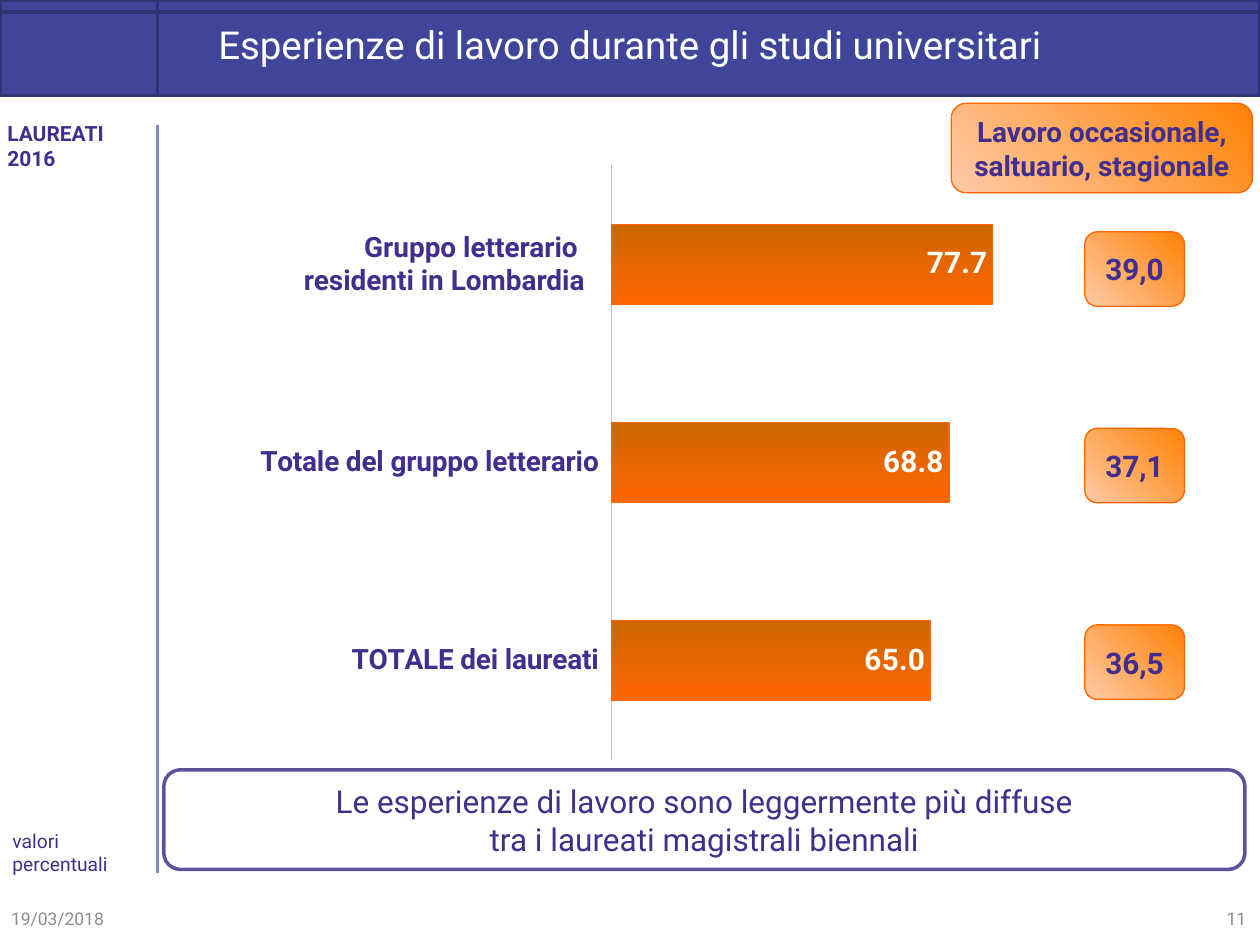
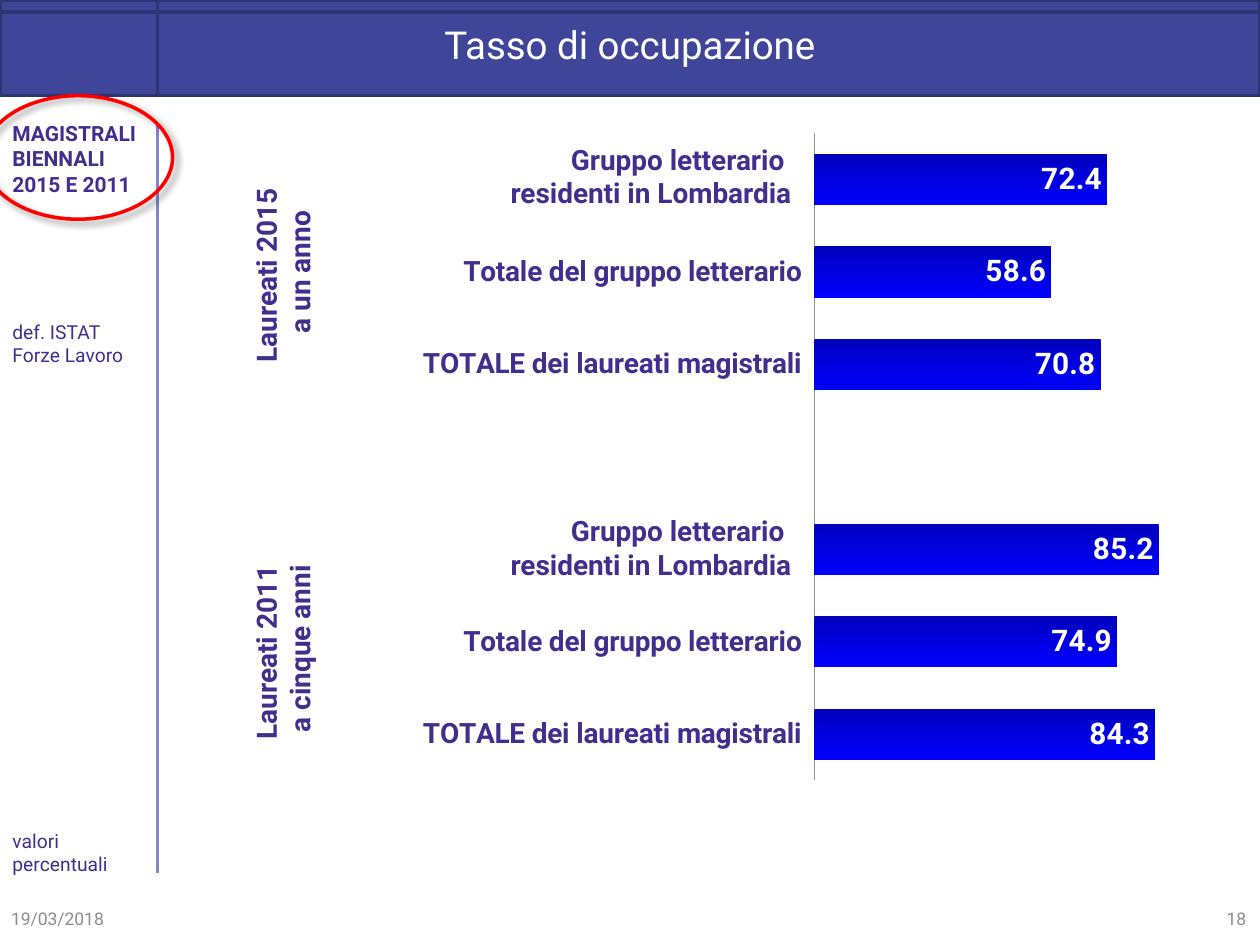
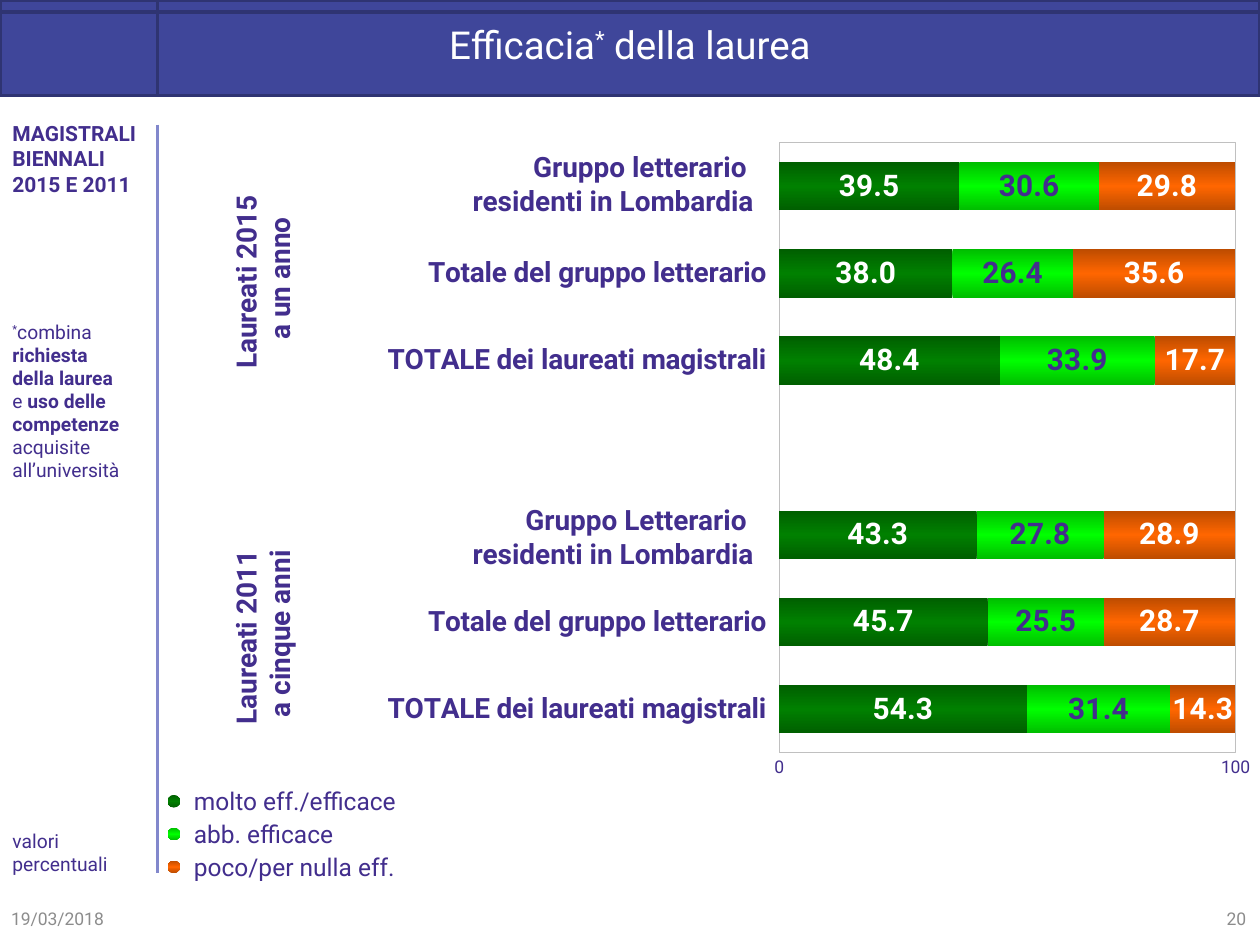
from dataclasses import dataclass

from lxml import etree
from pptx import Presentation
from pptx.chart.data import CategoryChartData
from pptx.dml.color import RGBColor
from pptx.enum.chart import XL_CHART_TYPE, XL_LABEL_POSITION, XL_TICK_LABEL_POSITION, XL_TICK_MARK
from pptx.enum.shapes import MSO_CONNECTOR, MSO_SHAPE
from pptx.enum.text import MSO_ANCHOR, PP_ALIGN
from pptx.oxml.ns import qn
from pptx.util import Inches, Pt

FONT = "Roboto"
WHITE = RGBColor(0xFF, 0xFF, 0xFF)
INDIGO = RGBColor(0x42, 0x2E, 0x8D)
BAND = RGBColor(0x3F, 0x46, 0x9A)
BAND_EDGE = RGBColor(0x2F, 0x34, 0x72)
RULE = RGBColor(0x82, 0x88, 0xCC)
CALLOUT_EDGE = RGBColor(0x5F, 0x50, 0x99)
FOOTER_GRAY = RGBColor(0x8C, 0x8C, 0x8C)
AXIS_GRAY = RGBColor(0xC0, 0xC0, 0xC0)
DARK_AXIS_GRAY = RGBColor(0x96, 0x96, 0x96)
RED = RGBColor(0xFF, 0x00, 0x00)
BLACK = RGBColor(0x00, 0x00, 0x00)
ORANGE = RGBColor(0xFF, 0x66, 0x00)
BROWN = RGBColor(0xCC, 0x66, 0x00)
AMBER = RGBColor(0xFF, 0x82, 0x05)
PEACH = RGBColor(0xFF, 0xCB, 0xA7)
NAVY = RGBColor(0x00, 0x00, 0xBD)
BLUE = RGBColor(0x00, 0x00, 0xFF)
DARK_GREEN = RGBColor(0x00, 0x5F, 0x00)
GREEN = RGBColor(0x00, 0x80, 0x00)
MID_LIME = RGBColor(0x00, 0xBD, 0x00)
LIME = RGBColor(0x00, 0xFF, 0x00)
RUST = RGBColor(0xBD, 0x4C, 0x00)

LEFT, CENTER, RIGHT = PP_ALIGN.LEFT, PP_ALIGN.CENTER, PP_ALIGN.RIGHT
TOP, MIDDLE, BOTTOM = MSO_ANCHOR.TOP, MSO_ANCHOR.MIDDLE, MSO_ANCHOR.BOTTOM
STRAIGHT = MSO_CONNECTOR.STRAIGHT
ROUNDED = MSO_SHAPE.ROUNDED_RECTANGLE
OVAL = MSO_SHAPE.OVAL
INTERNAL_STORAGE = MSO_SHAPE.FLOWCHART_INTERNAL_STORAGE
DOT = MSO_SHAPE.FLOWCHART_CONNECTOR
CLUSTERED, STACKED = XL_CHART_TYPE.BAR_CLUSTERED, XL_CHART_TYPE.BAR_STACKED
INSIDE_END, CENTERED = XL_LABEL_POSITION.INSIDE_END, XL_LABEL_POSITION.CENTER
NO_TICK = XL_TICK_MARK.NONE
LOW = XL_TICK_LABEL_POSITION.LOW

GREENS = (DARK_GREEN, GREEN, DARK_GREEN)
LIMES = (MID_LIME, LIME, MID_LIME)
ORANGES = (RUST, ORANGE, RUST)
GROUP = "Gruppo letterario \nresidenti in Lombardia"
COHORT_CATEGORIES = ["TOTALE dei laureati magistrali", "Totale del gruppo letterario", ""]
TWO_COHORTS = COHORT_CATEGORIES + [""] + COHORT_CATEGORIES
ONE_YEAR = "Laureati 2015 \na un anno"
FIVE_YEARS = "Laureati 2011 \na cinque anni"
MASTERS = "MAGISTRALI BIENNALI 2015 E 2011"


@dataclass
class Box:
    """Region of a slide, in inches."""
    left: float
    top: float
    width: float
    height: float

    def lengths(self):
        """Return the four lengths that shapes are placed with."""
        return [Inches(side) for side in (self.left, self.top, self.width, self.height)]


@dataclass
class Bars:
    """Values, gradient colours and label colour of one series."""
    values: list
    colors: tuple
    label_color: RGBColor = WHITE


@dataclass
class Span:
    """Piece of text with its own weight or raised position."""
    text: str
    bold: bool = False
    raised: bool = False


def style_font(font, size, color, bold=False):
    """Set name, size, colour and weight of a font."""
    font.name = FONT
    font.size = Pt(size)
    font.bold = bold
    font.color.rgb = color


def set_line(line, color, width):
    """Give a line its colour and width."""
    line.color.rgb = color
    line.width = Pt(width)


def set_gradient(fill, owner, colors, angle):
    """Fill with evenly spaced gradient colours at a clockwise angle."""
    fill.gradient()
    gradient = owner.find(".//" + qn("a:gradFill"))
    for child in list(gradient):
        gradient.remove(child)
    stops = etree.SubElement(gradient, qn("a:gsLst"))
    for index, color in enumerate(colors):
        position = index * 100000 // (len(colors) - 1)
        stop = etree.SubElement(stops, qn("a:gs"), pos=str(position))
        etree.SubElement(stop, qn("a:srgbClr"), val=str(color))
    etree.SubElement(gradient, qn("a:lin"), ang=str(angle * 60000), scaled="0")


def write_text(shape, content, size, color=INDIGO, bold=False, align=LEFT, anchor=TOP):
    """Write one paragraph, given as a string or as spans, into a shape."""
    frame = shape.text_frame
    frame.word_wrap = True
    frame.vertical_anchor = anchor
    para = frame.paragraphs[0]
    para.alignment = align
    spans = [Span(content, bold)] if isinstance(content, str) else content
    for span in spans:
        for index, line in enumerate(span.text.split("\n")):
            if index:
                para.add_line_break()
            if line:
                run = para.add_run()
                run.text = line
                style_font(run.font, size, color, span.bold)
                if span.raised:
                    run._r.get_or_add_rPr().set("baseline", "30000")
    return para


def add_text(page, box, content, size, **style):
    """Add a wrapped text box."""
    shape = page.shapes.add_textbox(*box.lengths())
    write_text(shape, content, size, **style)
    return shape


def add_plain_shape(page, kind, box):
    """Add a preset shape without shadow."""
    shape = page.shapes.add_shape(kind, *box.lengths())
    shape.shadow.inherit = False
    return shape


def add_header(page, box, title):
    """Draw the title band and its centred title."""
    band = add_plain_shape(page, INTERNAL_STORAGE, box)
    band.fill.solid()
    band.fill.fore_color.rgb = BAND
    set_line(band.line, BAND_EDGE, 2)
    text = add_text(page, box, "", 22)
    para = write_text(text, title, 22, color=WHITE, align=CENTER, anchor=MIDDLE)
    para.line_spacing = Pt(22)


def add_sidebar(page, box, heading, note, heading_shift=0):
    """Draw the side rule, the heading, the note and the unit of measure."""
    right = Inches(box.left + box.width)
    rule = page.shapes.add_connector(
        STRAIGHT, right, Inches(box.top + 0.08), right, Inches(box.top + 6.02))
    set_line(rule.line, RULE, 1.5)
    etree.SubElement(rule._element.spPr, qn("a:effectLst"))
    add_text(page, Box(box.left + heading_shift, box.top, 1.3, 0.7), heading, 12, bold=True)
    if note:
        add_text(page, Box(box.left, box.top + 1.58, 1.22, 0.87), note, 11)
    add_text(page, Box(box.left, box.top + 5.7, 1.22, 0.39), "valori percentuali", 11,
             anchor=BOTTOM)


def add_footer(page, box, number):
    """Write the date on the left and the page number on the right."""
    right = box.left + box.width - 2.33
    for left, text, align in ((box.left, "19/03/2018", LEFT), (right, number, RIGHT)):
        add_text(page, Box(left, box.top, 2.33, box.height), text, 10,
                 color=FOOTER_GRAY, align=align, anchor=MIDDLE)


def start_page(deck, title, heading, number, note=None, heading_shift=0):
    """Add a blank slide with header, sidebar and footer."""
    page = deck.slides.add_slide(deck.slide_layouts[6])
    add_sidebar(page, Box(0, 0.91, 1.25, 6.1), heading, note, heading_shift)
    add_header(page, Box(0, 0, 10, 0.76), title)
    add_footer(page, Box(-0.01, 7.09, 10, 0.4), number)
    return page


def place_plot(chart, area):
    """Fix the inner plot area to fractions of the chart."""
    plot_area = chart._chartSpace.chart.plotArea
    for old in plot_area.findall(qn("c:layout")):
        plot_area.remove(old)
    layout = etree.Element(qn("c:layout"))
    manual = etree.SubElement(layout, qn("c:manualLayout"))
    entries = [("layoutTarget", "inner"), ("xMode", "edge"), ("yMode", "edge")]
    entries += zip("xywh", area)
    for name, value in entries:
        etree.SubElement(manual, qn("c:" + name), val=str(value))
    plot_area.insert(0, layout)
    return plot_area


def add_bar_chart(page, box, area, categories, bars, gap, axis_color, kind=CLUSTERED):
    """Add a horizontal bar chart with gradient bars and value labels."""
    data = CategoryChartData(number_format="0.0")
    data.categories = categories
    for index, entry in enumerate(bars, 1):
        data.add_series(f"Series {index}", entry.values)
    chart = page.shapes.add_chart(kind, *box.lengths(), data).chart
    chart.has_legend = False
    chart.has_title = False
    style_font(chart.font, 16, INDIGO, True)
    place_plot(chart, area)

    names = chart.category_axis
    names.major_tick_mark = NO_TICK
    names.tick_label_position = LOW
    names.has_major_gridlines = False
    style_font(names.tick_labels.font, 16, INDIGO, True)
    set_line(names.format.line, axis_color, 0.4)

    scale = chart.value_axis
    scale.minimum_scale, scale.maximum_scale = 0, 100
    scale.has_major_gridlines = False
    scale.visible = False

    plot = chart.plots[0]
    plot.gap_width = gap
    plot.vary_by_categories = False
    if kind == STACKED:
        plot.overlap = 100
    for series, entry in zip(plot.series, bars):
        set_gradient(series.format.fill, series._element, entry.colors, 90)
        series.format.line.fill.background()
        labels = series.data_labels
        labels.show_value = True
        labels.number_format = "0.0"
        labels.number_format_is_linked = False
        labels.position = CENTERED if kind == STACKED else INSIDE_END
        style_font(labels.font, 17, entry.label_color, True)
    return chart


def show_scale(chart):
    """Show the ends of the value axis and frame the plot area."""
    scale = chart.value_axis
    scale.visible = True
    scale.major_unit = 100
    scale.major_tick_mark = NO_TICK
    scale.tick_labels.number_format = "#,##0"
    scale.tick_labels.number_format_is_linked = False
    style_font(scale.tick_labels.font, 10, INDIGO)
    set_line(scale.format.line, AXIS_GRAY, 0.4)
    frame = etree.SubElement(chart._chartSpace.chart.plotArea, qn("c:spPr"))
    etree.SubElement(frame, qn("a:noFill"))
    edge = etree.SubElement(frame, qn("a:ln"), w=str(Pt(0.4)))
    paint = etree.SubElement(edge, qn("a:solidFill"))
    etree.SubElement(paint, qn("a:srgbClr"), val=str(AXIS_GRAY))


def add_badge(page, box, text, size):
    """Add an orange rounded badge."""
    badge = add_plain_shape(page, ROUNDED, box)
    set_gradient(badge.fill, badge._element, (AMBER, PEACH), 135)
    set_line(badge.line, ORANGE, 0.75)
    write_text(badge, text, size, bold=True, align=CENTER, anchor=MIDDLE)


def add_callout(page, box, text):
    """Add the outlined conclusion."""
    callout = add_plain_shape(page, ROUNDED, box)
    callout.fill.solid()
    callout.fill.fore_color.rgb = WHITE
    set_line(callout.line, CALLOUT_EDGE, 2)
    write_text(callout, text, 18, align=CENTER, anchor=MIDDLE)


def add_group_label(page, box, text=GROUP):
    """Write the two-line label of the first bar."""
    add_text(page, box, text, 16, bold=True, align=RIGHT)


def add_cohort(page, box, heading, group=GROUP):
    """Write a cohort's upright heading and the label at its top right."""
    middle = box.top + box.height / 2
    upright = add_text(page, Box(box.left, middle - 0.32, 1.69, 0.64), heading, 16,
                       bold=True, align=CENTER)
    upright.rotation = 270
    add_group_label(page, Box(box.left + box.width - 3.11, box.top, 3.11, 0.64), group)


def add_highlight(page, box):
    """Circle a region with a shadowed red ellipse."""
    ring = add_plain_shape(page, OVAL, box)
    ring.fill.background()
    set_line(ring.line, RED, 2)
    effects = ring._element.spPr.find(qn("a:effectLst"))
    shadow = etree.SubElement(effects, qn("a:outerShdw"), blurRad=str(Pt(4)),
                              dist=str(Pt(3)), dir=str(45 * 60000))
    color = etree.SubElement(shadow, qn("a:srgbClr"), val=str(BLACK))
    etree.SubElement(color, qn("a:alpha"), val="40000")


def add_legend(page, box, entries):
    """List the series names beside their coloured dots."""
    for index, (name, colors) in enumerate(entries):
        top = box.top + 0.26 * index
        dot = add_plain_shape(page, DOT, Box(box.left, top + 0.12, 0.1, 0.1))
        set_gradient(dot.fill, dot._element, colors, 90)
        dot.line.fill.background()
        add_text(page, Box(box.left + 0.11, top, box.width - 0.11, 0.34), name, 14)


def build_work_experience(deck):
    """Build the slide on work during university studies."""
    page = start_page(deck, "Esperienze di lavoro durante gli studi universitari",
                      "LAUREATI \n2016", "11", heading_shift=-0.04)
    chart = add_bar_chart(
        page, Box(1.22, 0.99, 7.68, 5.81), (0.473, 0.055, 0.507, 0.812),
        ["TOTALE dei laureati", "Totale del gruppo letterario", ""],
        [Bars([65.0, 68.8, 77.7], (BROWN, ORANGE))], 150, AXIS_GRAY)
    set_line(chart.plots[0].series[0].format.line, ORANGE, 1)
    add_badge(page, Box(7.55, 0.82, 2.39, 0.71), "Lavoro occasionale, saltuario, stagionale", 16)
    for index, share in enumerate(("39,0", "37,1", "36,5")):
        add_badge(page, Box(8.61, 1.84 + 1.56 * index, 0.79, 0.59), share, 17)
    add_group_label(page, Box(1.63, 1.77, 3.11, 0.64))
    add_callout(page, Box(1.3, 6.11, 8.58, 0.79),
                "Le esperienze di lavoro sono leggermente più diffuse\n"
                "tra i laureati magistrali biennali")


def build_employment_rate(deck):
    """Build the slide on the employment rate."""
    page = start_page(deck, "Tasso di occupazione", MASTERS, "18", "def. ISTAT Forze Lavoro")
    values = [84.3, 74.9, 85.2, None, 70.8, 58.6, 72.4]
    add_bar_chart(page, Box(2.87, 0.99, 7.13, 5.67), (0.504, 0.012, 0.45, 0.906),
                  TWO_COHORTS, [Bars(values, (NAVY, BLUE))], 80, DARK_AXIS_GRAY)
    add_cohort(page, Box(1.4, 1.08, 4.98, 2.16), ONE_YEAR)
    add_cohort(page, Box(1.4, 4.03, 4.98, 2.24), FIVE_YEARS)
    add_highlight(page, Box(-0.13, 0.76, 1.5, 0.98))


def build_degree_effectiveness(deck):
    """Build the slide on how effective the degree is."""
    title = [Span("Efficacia"), Span("*", raised=True), Span(" della laurea")]
    note = [Span("*", raised=True), Span("combina "), Span("richiesta \ndella laurea \n", True),
            Span("e "), Span("uso delle \ncompetenze \n", True),
            Span("acquisite\nall’università")]
    page = start_page(deck, title, MASTERS, "20", note)
    bars = [Bars([54.3, 45.7, 43.3, None, 48.4, 38.0, 39.5], GREENS),
            Bars([31.4, 25.5, 27.8, None, 33.9, 26.4, 30.6], LIMES, INDIGO),
            Bars([14.3, 28.7, 28.9, None, 17.7, 35.6, 29.8], ORANGES)]
    chart = add_bar_chart(page, Box(2.09, 0.84, 8.27, 5.51), (0.495, 0.053, 0.438, 0.879),
                          TWO_COHORTS, bars, 80, AXIS_GRAY, STACKED)
    show_scale(chart)
    add_cohort(page, Box(1.24, 1.14, 4.84, 2.14), ONE_YEAR)
    add_cohort(page, Box(1.24, 3.94, 4.84, 2.18), FIVE_YEARS,
               "Gruppo Letterario \nresidenti in Lombardia")
    add_legend(page, Box(1.33, 6.19, 2.38, 0.86),
               [("molto eff./efficace", GREENS), ("abb. efficace", LIMES),
                ("poco/per nulla eff.", ORANGES)])


def main():
    """Build the deck and save it."""
    deck = Presentation()
    deck.slide_width, deck.slide_height = Inches(10), Inches(7.5)
    build_work_experience(deck)
    build_employment_rate(deck)
    build_degree_effectiveness(deck)
    deck.save("out.pptx")


if __name__ == "__main__":
    main()
